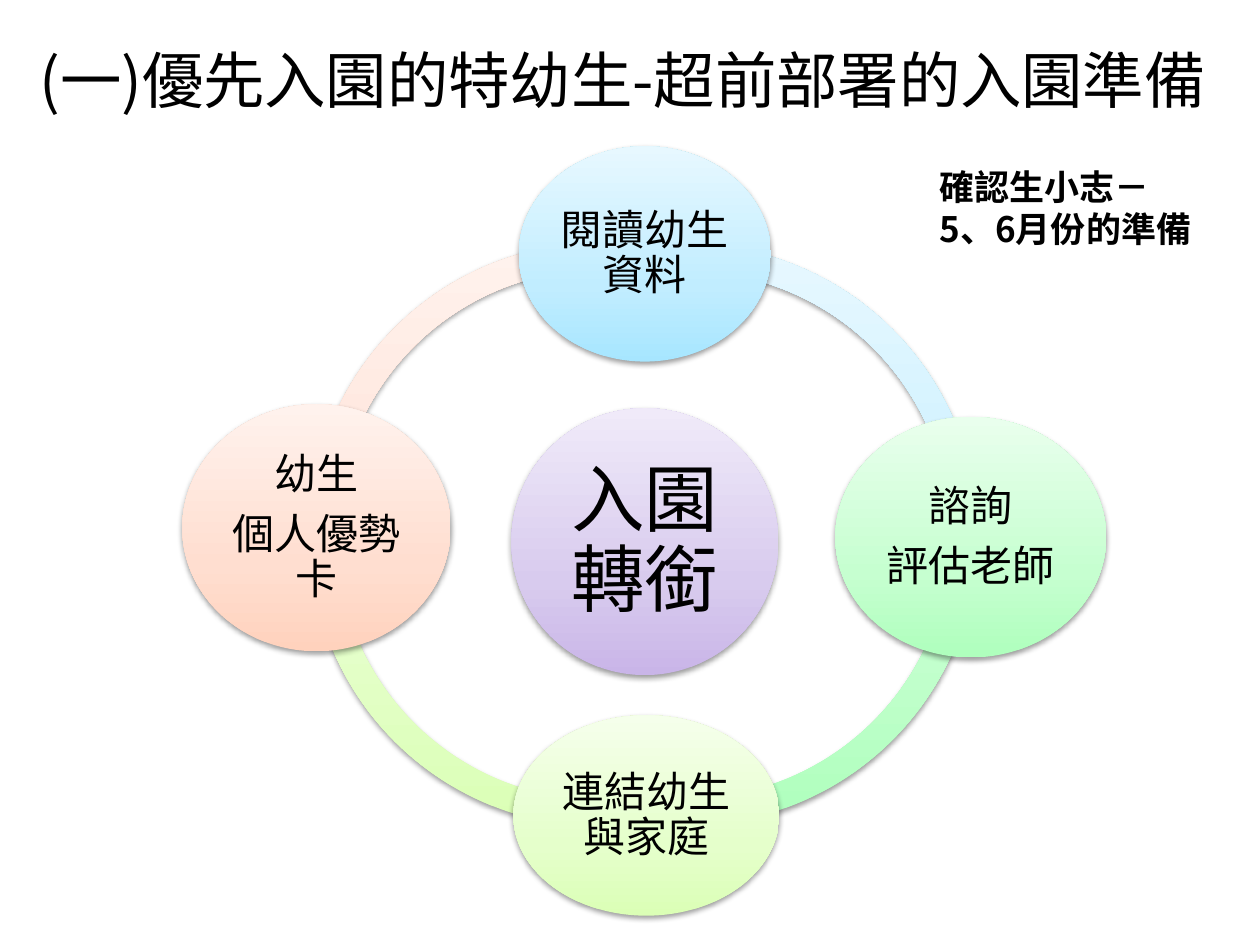
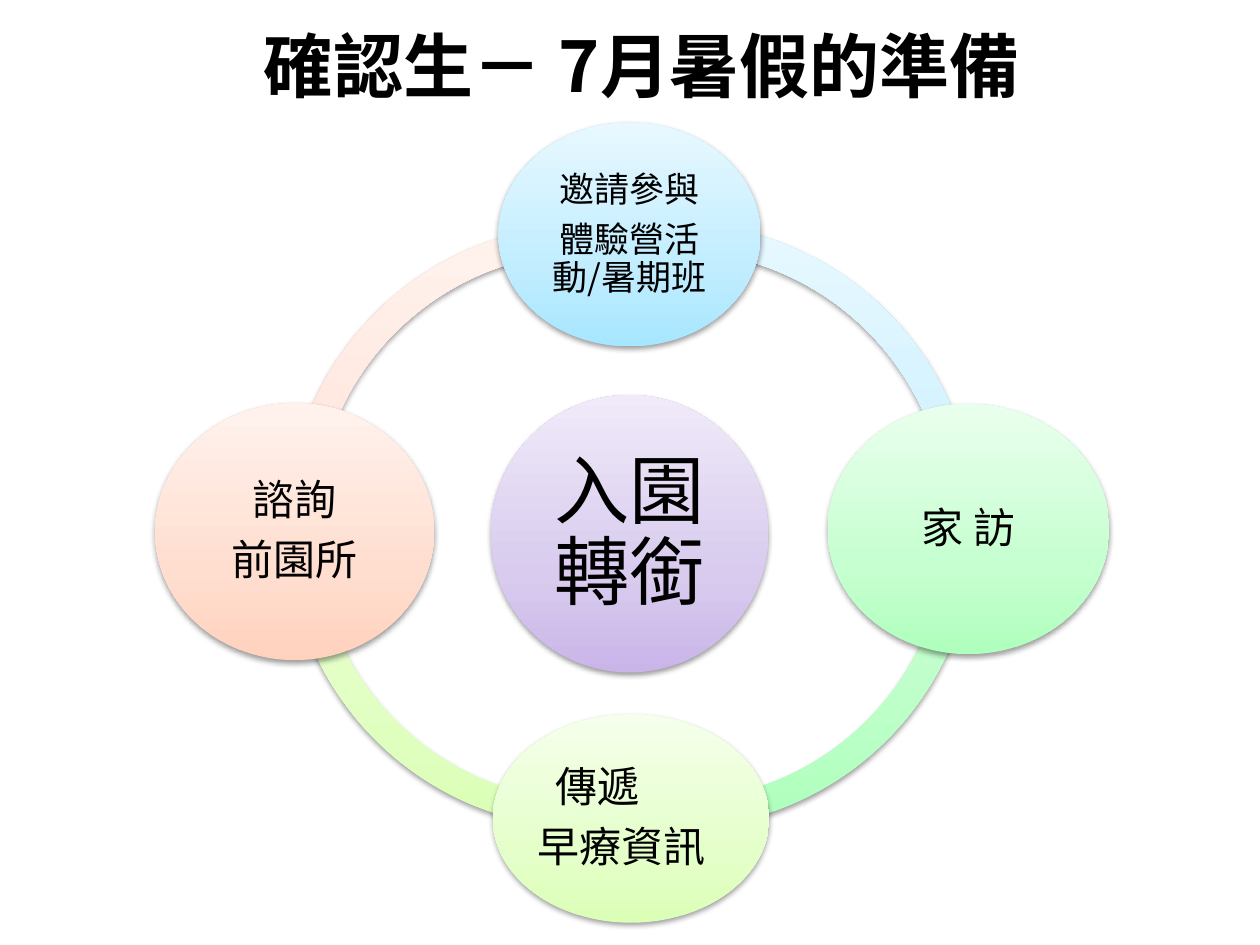
from lxml.etree import SubElement as Sub
from pptx import Presentation
from pptx.dml.color import RGBColor
from pptx.enum.shapes import MSO_SHAPE as Preset
from pptx.enum.text import MSO_ANCHOR as Anchor, PP_ALIGN as Align
from pptx.oxml.ns import qn
from pptx.util import Cm, Pt

FONT = "Noto Sans CJK SC"
BLACK = "000000"
COLORS = {
    "blue": ("A7E6FF", "C1EDFF", "E7F8FF"),
    "green": ("AFFFBD", "C6FFD0", "E9FFED"),
    "lime": ("DBFFB6", "E5FFCB", "F5FFEB"),
    "peach": ("FFD2BD", "FFDED0", "FFF2ED"),
    "purple": ("C9B5E8", "D8CBEE", "F0EAF9"),
}
STOPS = (0, 35000, 100000)
SHADOW = {"blurRad": "40000", "dist": "20000", "dir": "5400000", "rotWithShape": "0"}
HUB_SIZE, RING_SIZE, RING_WIDTH = 5.38, 11.71, 0.046
NODES = {
    "blue": (0, -5.8, 5.08, 4.34),
    "green": (6.57, -0.09, 5.46, 4.85),
    "lime": (0.03, 5.52, 5.36, 4.04),
    "peach": (-6.62, -0.28, 5.41, 4.98),
}

MAY_JUNE = {
    "center": (13, 10.92),
    "scale": 1,
    "hub_size": 42,
    "arcs": {
        "peach": (-0.9, -0.17, 108.798, 167.369),
        "lime": (-0.9, -0.11, 48.354, 108.982),
        "green": (0.85, -0.14, 0.334, 58.909),
        "blue": (0.85, -0.14, 156.819, 0.376),
    },
    "steps": {
        "blue": {"text": "閱讀幼生資料"},
        "green": {"text": "諮詢\n評估老師"},
        "lime": {"text": "連結幼生與家庭"},
        "peach": {"text": "幼生\n個人優勢卡"},
    },
    "nodes": NODES,
}
JULY = {
    "center": (12.69, 10.76),
    "scale": 1.04,
    "hub_size": 43,
    "arcs": {
        "peach": (-0.78, -0.14, 107.338, 166.633),
        "lime": (-0.78, -0.14, 49.263, 107.313),
        "green": (0.85, -0.14, 0.274, 59.076),
        "blue": (0.85, -0.17, 156.819, 0.376),
    },
    "steps": {
        "blue": {"text": "邀請參與\n體驗營活動/暑期班", "size": 20},
        "green": {"text": "家 訪"},
        "lime": {"text": "傳遞\n早療資訊", "align": Align.LEFT, "first_indent": 0.36},
        "peach": {"text": "諮詢\n前園所"},
    },
    "nodes": {**NODES, "peach": (-6.49, -0.04, 5.41, 4.98)},
}


def apply(target, values):
    """Set every attribute in values on target."""
    for name, value in values.items():
        setattr(target, name, value)


def write(frame, text, size, bold=False, align=Align.CENTER, leading=1.2,
          after=0, inset=None, first_indent=0):
    """Fill a text frame with one paragraph per line of text."""
    apply(frame, {"word_wrap": True, "vertical_anchor": Anchor.MIDDLE})
    if inset is not None:
        sides = ("margin_left", "margin_top", "margin_right", "margin_bottom")
        apply(frame, dict.fromkeys(sides, Cm(inset)))
    for index, line in enumerate(text.split("\n")):
        paragraph = frame.add_paragraph() if index else frame.paragraphs[0]
        paragraph.text = line
        apply(paragraph, {"alignment": align, "line_spacing": Pt(round(size * leading, 1)),
                          "space_after": Pt(round(size * after, 1))})
        if first_indent and not index:
            paragraph._p.get_or_add_pPr().set("marL", str(Cm(first_indent)))
        for run in paragraph.runs:
            apply(run.font, {"size": Pt(size), "bold": bold, "name": FONT})
            run.font.color.rgb = RGBColor.from_string(BLACK)
            Sub(run._r.get_or_add_rPr(), qn("a:ea"), typeface=FONT)


def add_title(slide, box, text, size, **style):
    """Add a heading in a box given in centimetres."""
    heading = slide.shapes.add_textbox(*map(Cm, box))
    write(heading.text_frame, text, size, **style)


def add_glossy(slide, preset, center, width, height, color):
    """Add a borderless preset with a vertical gradient and a soft shadow."""
    x, y = center
    part = slide.shapes.add_shape(preset, Cm(x - width / 2), Cm(y - height / 2),
                                  Cm(width), Cm(height))
    part.line.fill.background()
    part.fill.gradient()
    gradient = part._element.spPr.find(qn("a:gradFill"))
    for child in list(gradient):
        gradient.remove(child)
    stops = Sub(gradient, qn("a:gsLst"))
    for position, shade in zip(STOPS, COLORS[color]):
        Sub(Sub(stops, qn("a:gs"), pos=str(position)), qn("a:srgbClr"), val=shade)
    Sub(gradient, qn("a:lin"), ang="16200000", scaled="1")
    part.shadow.inherit = False
    effects = part._element.spPr.find(qn("a:effectLst"))
    shade = Sub(Sub(effects, qn("a:outerShdw"), SHADOW), qn("a:srgbClr"), val=BLACK)
    Sub(shade, qn("a:alpha"), val="38000")
    return part


def add_cycle(slide, center, scale, hub_size, arcs, steps, nodes):
    """Draw the ring, its hub and the four steps around a center."""
    def around(dx, dy):
        return center[0] + dx * scale, center[1] + dy * scale

    ring = RING_SIZE * scale
    for color, (dx, dy, start, end) in arcs.items():
        arc = add_glossy(slide, Preset.BLOCK_ARC, around(dx, dy), ring, ring, color)
        for index, value in enumerate((start, end, RING_WIDTH)):
            arc.adjustments[index] = value
    hub = add_glossy(slide, Preset.OVAL, center, HUB_SIZE * scale, HUB_SIZE * scale, "purple")
    body = {"leading": 1.08, "after": 0.35}
    write(hub.text_frame, "入園轉銜", hub_size, inset=0.15, **body)
    for color, (dx, dy, width, height) in nodes.items():
        node = add_glossy(slide, Preset.OVAL, around(dx, dy), width * scale,
                          height * scale, color)
        write(node.text_frame, **{"size": 24, "inset": 0.08, **body, **steps[color]})


def build_may_june(slide):
    """Build the slide on preparing in May and June."""
    add_title(slide, (18.69, 3.71, 6.07, 0.94), "確認生小志－\v5、6月份的準備", 20,
              bold=True, align=Align.LEFT)
    add_cycle(slide, **MAY_JUNE)
    add_title(slide, (0.13, 0, 24.84, 3.18), "(一)優先入園的特幼生-超前部署的入園準備", 35.1)


def build_july(slide):
    """Build the slide on preparing in the July holiday."""
    add_title(slide, (1.5, -0.28, 22.86, 3.18), "確認生－ 7月暑假的準備", 40, bold=True)
    add_cycle(slide, **JULY)


def main():
    """Build both slides and save the deck."""
    deck = Presentation()
    apply(deck, {"slide_width": Cm(25.4), "slide_height": Cm(19.05)})
    for build in (build_may_june, build_july):
        build(deck.slides.add_slide(deck.slide_layouts[6]))
    deck.save("out.pptx")


if __name__ == "__main__":
    main()
